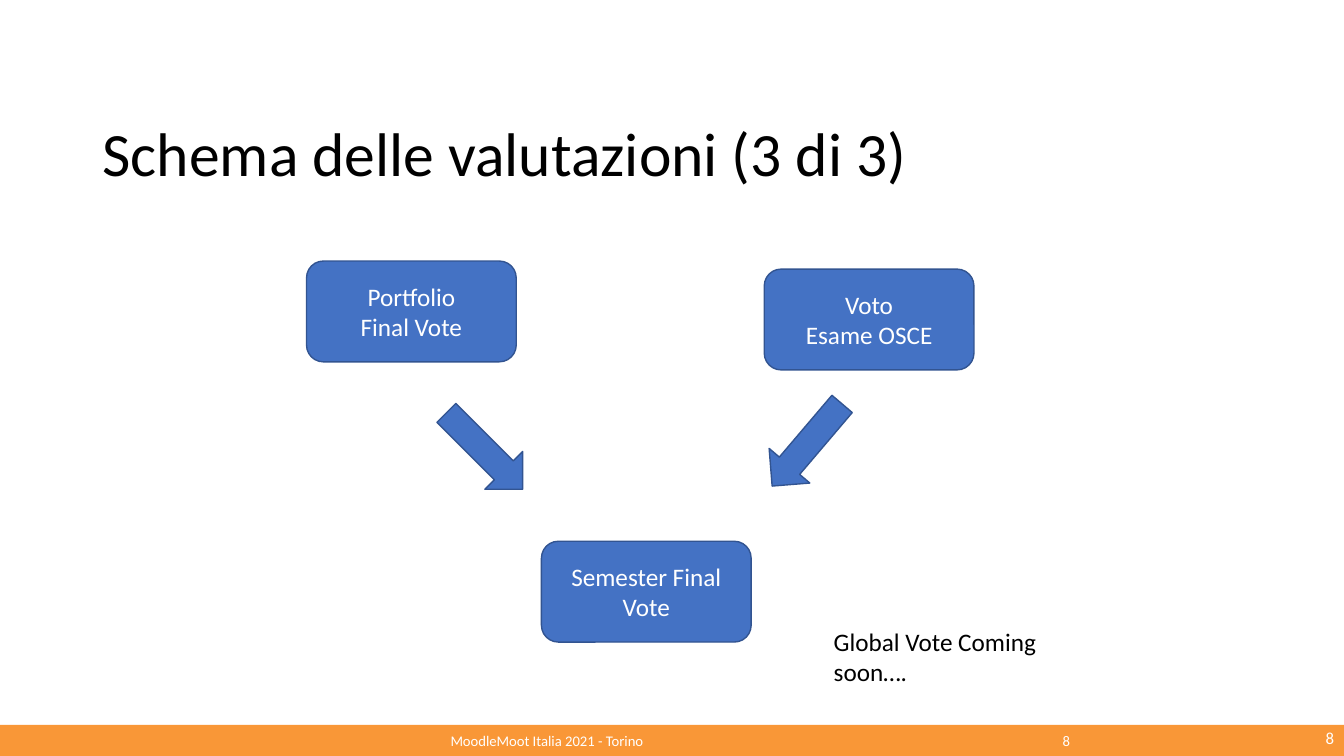
import pptx
import pptx.dml.color
import pptx.enum.shapes
import pptx.enum.text
import pptx.util

Inches = pptx.util.Inches
SHAPES = pptx.enum.shapes.MSO_SHAPE
ALIGN = pptx.enum.text.PP_ALIGN
ANCHOR = pptx.enum.text.MSO_ANCHOR

presentation = pptx.Presentation()
presentation.slide_width = Inches(13.33)
presentation.slide_height = Inches(7.5)
slide = presentation.slides.add_slide(presentation.slide_layouts[6])


def add_block(kind, left, top, width, height, fill="4472C4", line="325491"):
    shape = slide.shapes.add_shape(
        kind, Inches(left), Inches(top), Inches(width), Inches(height))
    shape.shadow.inherit = False
    shape.fill.solid()
    shape.fill.fore_color.rgb = pptx.dml.color.RGBColor.from_string(fill)
    if line:
        shape.line.color.rgb = pptx.dml.color.RGBColor.from_string(line)
        shape.line.width = pptx.util.Pt(1)
    else:
        shape.line.fill.background()
    return shape


def write_text(text, box=None, shape=None, size=18, color="000000",
               align=ALIGN.LEFT, anchor=ANCHOR.MIDDLE, spacing=1.0):
    """Write one paragraph per line into shape, or into a new text box at box."""
    if shape is None:
        shape = slide.shapes.add_textbox(*[Inches(length) for length in box])
    frame = shape.text_frame
    frame.word_wrap = True
    frame.vertical_anchor = anchor
    frame.text = text
    for paragraph in frame.paragraphs:
        paragraph.alignment = align
        paragraph.line_spacing = spacing
        paragraph.font.name = "Calibri"
        paragraph.font.size = pptx.util.Pt(size)
        paragraph.font.color.rgb = pptx.dml.color.RGBColor.from_string(color)


# Footer
add_block(SHAPES.RECTANGLE, 0, 7.19, 13.33, 0.31, fill="F99737", line=None)
for text, left, width in [("MoodleMoot Italia 2021 - Torino", 4.37, 3), ("8", 10.44, 0.4)]:
    write_text(text, (left, 7.19, width, 0.31), size=10.5, color="FFFFFF")
write_text("8", (11.08, 7.12, 2.25, 0.4), size=12, color="FFFFFF", align=ALIGN.RIGHT)

write_text("Schema delle valutazioni (3 di 3)", (0.92, 0.83, 11.5, 1.45),
           size=44, spacing=0.9)

# Votes and the arrows leading to the final one
for text, left, top in [
    ("Portfolio\nFinal Vote", 3.04, 2.59),
    ("Voto\nEsame OSCE", 7.58, 2.67),
    ("Semester Final Vote", 5.37, 5.37),
]:
    vote = add_block(SHAPES.ROUNDED_RECTANGLE, left, top, 2.08, 1)
    write_text(text, shape=vote, color="FFFFFF", align=ALIGN.CENTER)

for left, top, rotation in [(4.27, 4.21, 45), (7.47, 4.15, 130.4)]:
    arrow = add_block(SHAPES.RIGHT_ARROW, left, top, 1.07, 0.53)
    arrow.rotation = rotation

write_text("Global Vote Coming soon….", (8.17, 6.16, 2.85, 0.71), anchor=ANCHOR.TOP)

presentation.save("out.pptx")
